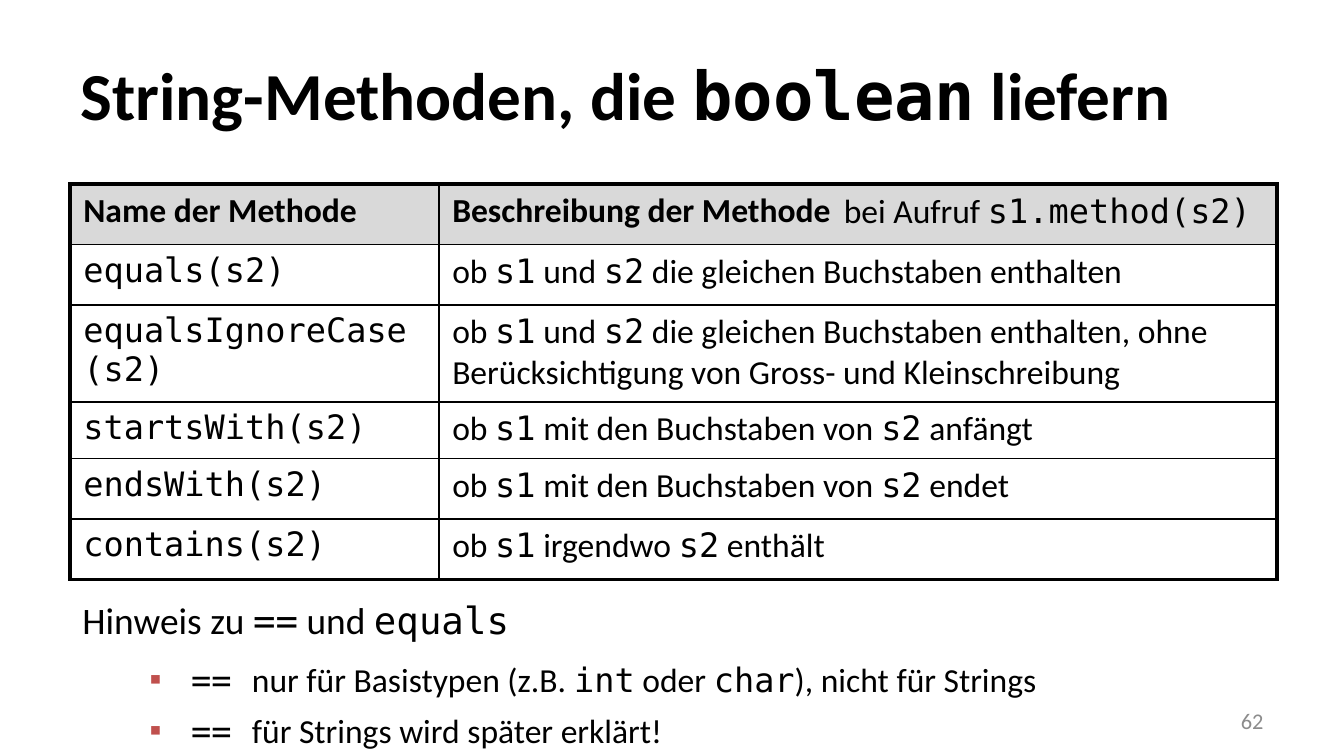
"""Build a slide that lists the String methods with a boolean result."""
import lxml.etree
import pptx
import pptx.dml.color
import pptx.enum.text
import pptx.oxml.ns
import pptx.util


class Theme:
    sans, mono = "Calibri", "DejaVu Sans Mono"
    ink, head, mark, pale = "000000", "D9D9D9", "C0504D", "8C8C8C"
    title, lead, text, note = 36, 20, 18, 12
    thick, thin = 2.25, 1


deck = pptx.Presentation()
deck.slide_width = pptx.util.Inches(10)
deck.slide_height = deck.slide_width * 9 // 16
col, row = deck.slide_width / 100, deck.slide_height / 100
qn = pptx.oxml.ns.qn
rgb = pptx.dml.color.RGBColor.from_string
align = pptx.enum.text.PP_ALIGN
anchor = pptx.enum.text.MSO_ANCHOR


def place(left, top, width, height):
    """Turn percent of the slide into lengths."""
    return [int(v) for v in (left * col, top * row, width * col, height * row)]


def write(para, text, size=Theme.text, color=Theme.ink, bold=False, side=align.LEFT, gap=0):
    """Fill a paragraph; words between backticks are set as code."""
    para.alignment = side
    para.space_before = para.space_after = pptx.util.Pt(gap)
    for i, part in enumerate(text.split("`")):
        if part:
            run = para.add_run()
            run.text = part
            run.font.name = Theme.mono if i % 2 else Theme.sans
            run.font.size = pptx.util.Pt(size)
            run.font.bold = bold
            run.font.color.rgb = rgb(color)


slide = deck.slides.add_slide(deck.slide_layouts[5])
title = slide.shapes.title
title.left, title.top, title.width, title.height = place(5, 4.09, 90, 16.7)
title.text_frame.vertical_anchor = anchor.MIDDLE
write(title.text_frame.paragraphs[0], "String-Methoden, die `boolean` liefern",
      size=Theme.title, bold=True)

page = slide.shapes.add_textbox(*place(71.7, 92.7, 23.3, 5.33)).text_frame
page.vertical_anchor = anchor.MIDDLE
write(page.paragraphs[0], "62", size=Theme.note, color=Theme.pale, side=align.RIGHT)

lines = [
    ("Name der Methode", "Beschreibung der Methode"),
    ("`equals(s2)`", "ob `s1` und `s2` die gleichen Buchstaben enthalten"),
    ("`equalsIgnoreCase(s2)`", "ob `s1` und `s2` die gleichen Buchstaben enthalten, "
     "ohne Berücksichtigung von Gross- und Kleinschreibung"),
    ("`startsWith(s2)`", "ob `s1` mit den Buchstaben von `s2` anfängt"),
    ("`endsWith(s2)`", "ob `s1` mit den Buchstaben von `s2` endet"),
    ("`contains(s2)`", "ob `s1` irgendwo `s2` enthält"),
]
wide = [27.45, 62.35]
high = [8, 8, 12.8, 7.5, 8, 8]
grid = slide.shapes.add_table(
    len(high), len(wide), *place(5.2, 24.35, sum(wide), sum(high))).table
grid.first_row = grid.horz_banding = False
for c, size in enumerate(wide):
    grid.columns[c].width = int(size * col)
for r, size in enumerate(high):
    grid.rows[r].height = int(size * row)
    for c, text in enumerate(lines[r]):
        cell = grid.cell(r, c)
        write(cell.text_frame.paragraphs[0], text, bold=r == 0)
        edges = {"L": c == 0, "R": c == len(wide) - 1, "T": r == 0, "B": r == len(high) - 1}
        for side, outer in edges.items():
            weight = pptx.util.Pt(Theme.thick if outer else Theme.thin)
            line = lxml.etree.SubElement(
                cell._tc.get_or_add_tcPr(), qn("a:ln" + side), w=str(int(weight)))
            fill = lxml.etree.SubElement(line, qn("a:solidFill"))
            lxml.etree.SubElement(fill, qn("a:srgbClr"), val=Theme.ink)
        if r == 0:
            cell.fill.solid()
            cell.fill.fore_color.rgb = rgb(Theme.head)
        else:
            cell.fill.background()

call = slide.shapes.add_textbox(*place(61.8, 24.3, 50, 7.1)).text_frame
call.word_wrap = True
write(call.paragraphs[0], "bei Aufruf `s1.method(s2)`")

hint = slide.shapes.add_textbox(*place(5.15, 78.1, 90, 32.7)).text_frame
hint.word_wrap = True
write(hint.paragraphs[0], "Hinweis zu `==` und `equals`", size=Theme.lead, gap=6)
for text in ("`== `nur für Basistypen (z.B. `int` oder `char`), nicht für Strings",
             "`== `für Strings wird später erklärt!"):
    para = hint.add_paragraph()
    para.level = 1
    write(para, text, gap=3)
    prop = para._p.get_or_add_pPr()
    prop.set("marL", str(int(8.1 * col)))
    prop.set("indent", str(int(-3.1 * col)))
    tint = lxml.etree.SubElement(prop, qn("a:buClr"))
    lxml.etree.SubElement(tint, qn("a:srgbClr"), val=Theme.mark)
    lxml.etree.SubElement(prop, qn("a:buFont"), typeface=Theme.sans)
    lxml.etree.SubElement(prop, qn("a:buChar"), char="▪")

deck.save("out.pptx")
